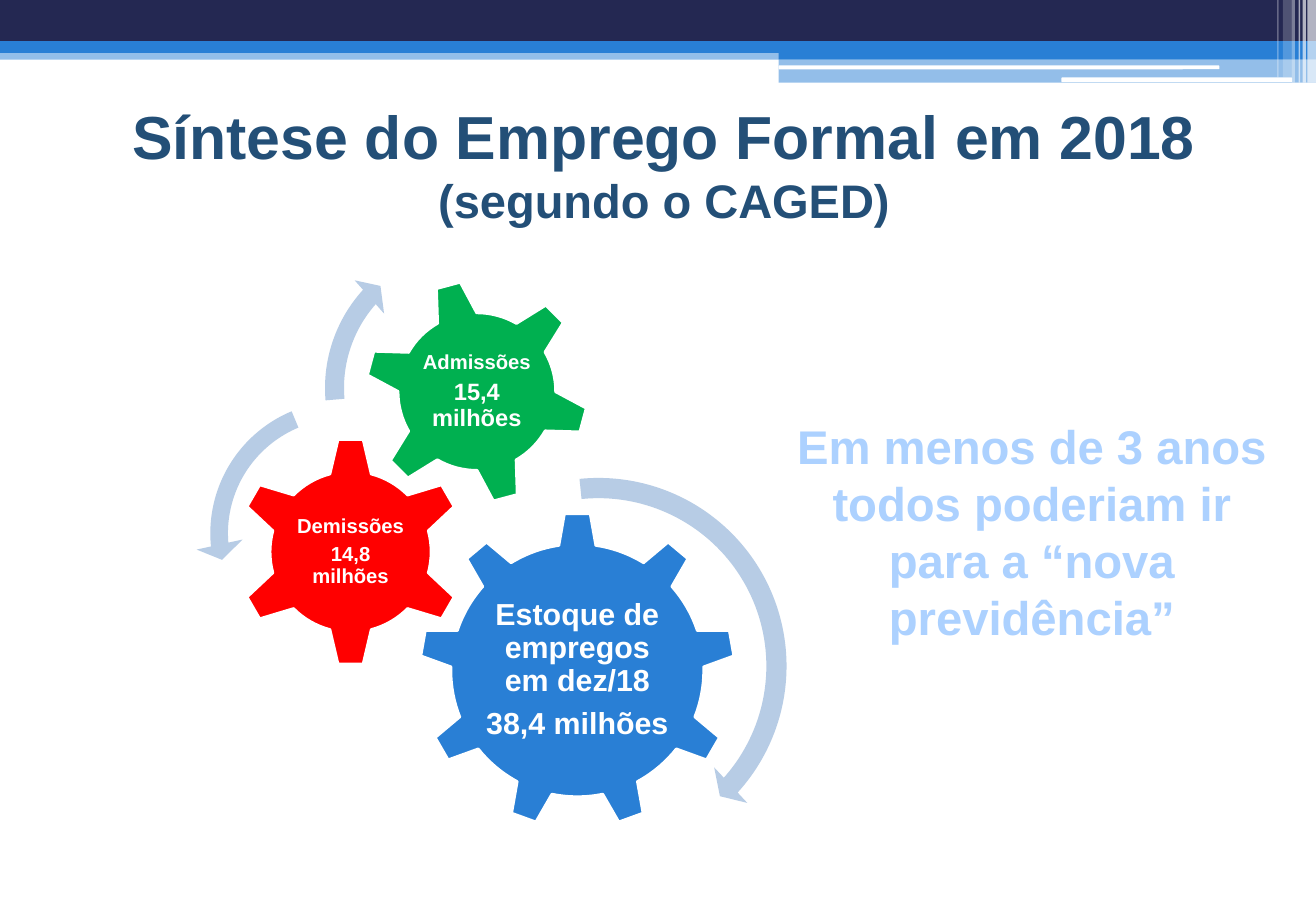
from lxml import etree
from pptx import Presentation
from pptx.dml.color import RGBColor
from pptx.enum.shapes import MSO_SHAPE
from pptx.enum.text import MSO_ANCHOR, PP_ALIGN
from pptx.oxml.ns import qn
from pptx.util import Cm, Pt

RECT, ROUND = MSO_SHAPE.RECTANGLE, MSO_SHAPE.ROUNDED_RECTANGLE
GEAR_6, GEAR_9 = MSO_SHAPE.GEAR_6, MSO_SHAPE.GEAR_9
ARROW, LEFT_ARROW = MSO_SHAPE.CIRCULAR_ARROW, MSO_SHAPE.LEFT_CIRCULAR_ARROW
CENTER, MIDDLE, TOP = PP_ALIGN.CENTER, MSO_ANCHOR.MIDDLE, MSO_ANCHOR.TOP

NAVY, BLUE, WHITE = "242852", "297FD5", "FFFFFF"
RED, GREEN, PALE = "FF0000", "00B050", "B7CCE5"
TITLE_COLOR, QUOTE_COLOR = "234F77", "ACD1FF"


def paint(color_format, color):
    color_format.rgb = RGBColor.from_string(color)


def write(para, text, size=18, color=WHITE, bold=True, font="Arial"):
    span = para.add_run()
    span.text = text
    span.font.name, span.font.size, span.font.bold = font, Pt(size), bold
    paint(span.font.color, color)


class Slide:
    def __init__(self, page):
        self.page = page

    def title(self, place, lines):
        """Each line is a (text, size) pair."""
        box = self.page.shapes.title
        box.left, box.top, box.width, box.height = map(Cm, place)
        frame = box.text_frame
        frame.vertical_anchor, frame.word_wrap = MIDDLE, True
        para = frame.paragraphs[0]
        para.alignment = CENTER
        for index, (text, size) in enumerate(lines):
            if index:
                para.add_line_break()
            write(para, text, size, TITLE_COLOR)

    def shape(self, kind, place, color, opacity=100, line=None, adjust=(), rotation=0):
        shape = self.page.shapes.add_shape(kind, *map(Cm, place))
        shape.shadow.inherit = False
        shape.rotation = rotation
        shape.fill.solid()
        paint(shape.fill.fore_color, color)
        if opacity < 100:
            tint = shape.fill._xPr.find(".//" + qn("a:srgbClr"))
            etree.SubElement(tint, qn("a:alpha"), val=str(opacity * 1000))
        if line:
            paint(shape.line.color, line)
            shape.line.width = Pt(1.5)
        else:
            shape.line.fill.background()
        for index, value in enumerate(adjust):
            shape.adjustments[index] = value

    def text(self, place, lines, color=WHITE, anchor=MIDDLE, inset=None, spacing=1, after=0):
        """Each line is a (text, size) pair and makes one paragraph."""
        frame = self.page.shapes.add_textbox(*map(Cm, place)).text_frame
        frame.word_wrap, frame.vertical_anchor = True, anchor
        if inset is not None:
            frame.margin_left = frame.margin_right = Cm(inset)
            frame.margin_top = frame.margin_bottom = Cm(inset)
        for index, (text, size) in enumerate(lines):
            para = frame.add_paragraph() if index else frame.paragraphs[0]
            para.alignment, para.line_spacing = CENTER, spacing
            para.space_after = Pt(after)
            write(para, text, size, color)

    def gear(self, kind, center, size, color, label_size, lines, rotation=0):
        def around(width, height):
            return center[0] - width / 2, center[1] - height / 2, width, height

        self.shape(kind, around(size, size), color, line=WHITE, rotation=rotation)
        self.text(around(*label_size), lines, inset=0.06, spacing=0.9,
                  after=0.35 * lines[0][1])


def main():
    deck = Presentation()
    deck.slide_width, deck.slide_height = Cm(27.51), Cm(19.05)
    slide = Slide(deck.slides.add_slide(deck.slide_layouts[5]))

    # Header bands
    for kind, place, color, opacity in (
        (RECT, (0, 1.02, 27.51, 0.23), BLUE, 50),
        (RECT, (0, 0, 27.51, 0.86), NAVY, 100),
        (RECT, (0, 0.86, 27.51, 0.25), BLUE, 100),
        (RECT, (16.28, 0.99, 11.23, 0.25), BLUE, 100),
        (RECT, (16.28, 1.23, 11.23, 0.5), BLUE, 50),
        (ROUND, (16.28, 1.37, 9.21, 0.08), WHITE, 100),
        (ROUND, (22.19, 1.62, 4.82, 0.1), WHITE, 100),
    ):
        slide.shape(kind, place, color, opacity)

    # Light stripes at the right edge: left, width, height, opacity
    for left, width, height, opacity in (
        (27.33, 0.18, 1.73, 65), (27.23, 0.07, 1.73, 65), (27.15, 0.03, 1.73, 60),
        (27, 0.07, 1.73, 40), (26.82, 0.18, 1.62, 20), (26.7, 0.03, 1.62, 30),
    ):
        slide.shape(RECT, (left, 0, width, height), WHITE, opacity)

    slide.title((1.5, 1.93, 24.76, 2.97),
                [("Síntese do Emprego Formal em 2018", 36), ("(segundo o CAGED)", 27.9)])

    # Gears
    slide.gear(GEAR_9, (12.07, 14.02), 6.6, BLUE, (3.96, 3.4),
               [("Estoque de empregos em dez/18", 18), ("38,4 milhões", 18)])
    slide.gear(GEAR_6, (7.33, 11.54), 4.8, RED, (2.39, 2.36),
               [("Demissões", 12), ("14,8 milhões", 12)])
    slide.gear(GEAR_6, (9.97, 8.19), 4.7, GREEN, (2.64, 2.64),
               [("Admissões", 12), ("15,4 milhões", 14)], rotation=345)

    # Turning arrows
    for kind, left, top, size, adjust in (
        (ARROW, 8.28, 9.7, 8.46, (0.05, 2.99, 25.19, 158.55, 0.06)),
        (LEFT_ARROW, 4.09, 8.08, 6.15, (0.06, 4.3, 104.89, 148.38, 0.08)),
        (ARROW, 6.53, 4.8, 6.63, (0.06, 3.94, 133.14, 105.08, 0.07)),
    ):
        slide.shape(kind, (left, top, size, size), PALE, adjust=adjust)

    # Closing statement
    slide.text((16.21, 8.61, 10.72, 5.05),
               [("Em menos de 3 anos todos poderiam ir para a “nova previdência”", 28)],
               color=QUOTE_COLOR, anchor=TOP)

    deck.save("out.pptx")


if __name__ == "__main__":
    main()
